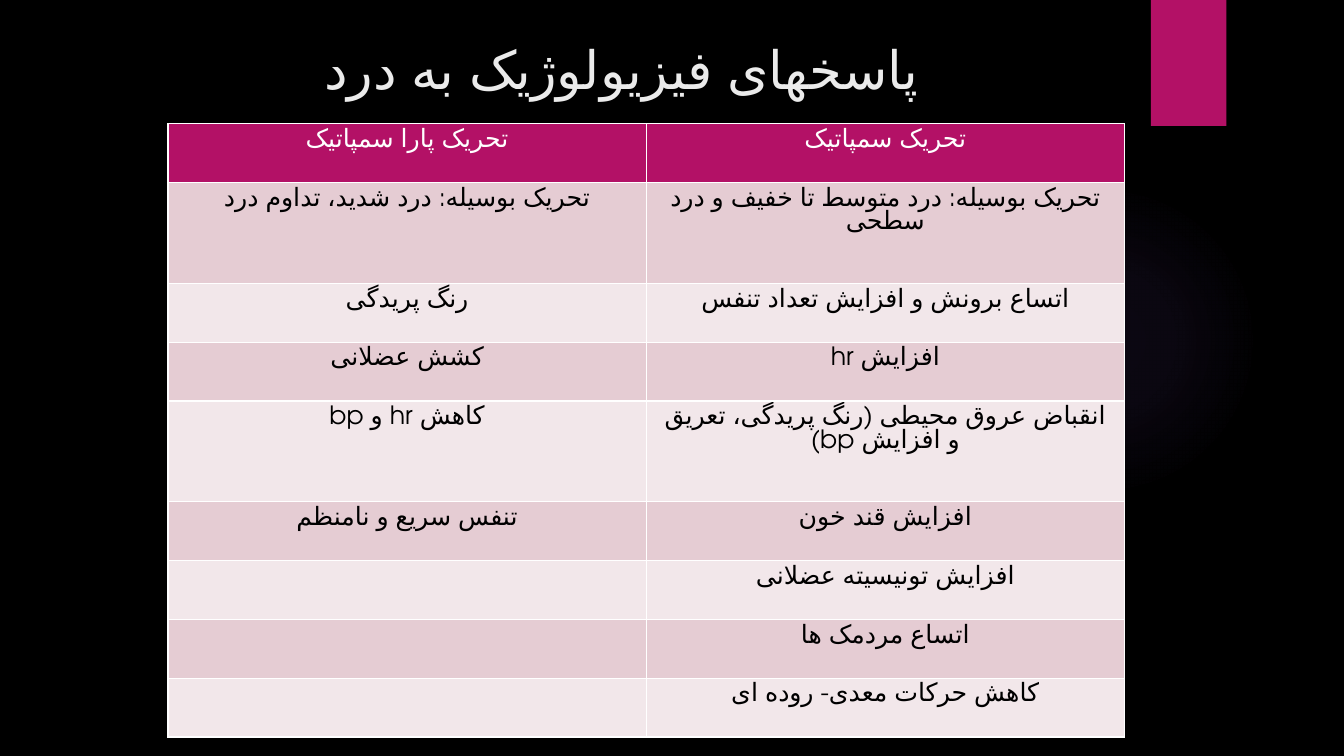
from lxml.etree import SubElement
from pptx import Presentation
from pptx.dml.color import RGBColor
from pptx.enum.lang import MSO_LANGUAGE_ID as Language
from pptx.enum.shapes import MSO_SHAPE as Preset
from pptx.enum.text import MSO_ANCHOR as Anchor, PP_ALIGN as Align
from pptx.oxml import parse_xml
from pptx.oxml.ns import nsdecls, qn

EMU_PER_PX = 9525
FONT = "TeX Gyre Adventor"
MAGENTA, WHITE, BLACK = "B31166", "FFFFFF", "000000"
BANDS = ["E5CCD3", "F2E7EA"]
TITLE = "پاسخهای فیزیولوژیک به درد"
ROW, TALL_ROW = 56, 96
RESPONSES = [
    (ROW, "تحریک پارا سمپاتیک", "تحریک سمپاتیک"),
    (TALL_ROW, "تحریک بوسیله: درد شدید، تداوم درد",
     "تحریک بوسیله: درد متوسط تا خفیف و درد سطحی"),
    (ROW, "رنگ پریدگی", "اتساع برونش و افزایش تعداد تنفس"),
    (ROW, "کشش عضلانی", "افزایش hr"),
    (TALL_ROW, "کاهش hr و bp",
     "انقباض عروق محیطی (رنگ پریدگی، تعریق و افزایش bp)"),
    (ROW, "تنفس سریع و نامنظم", "افزایش قند خون"),
    (ROW, "", "افزایش تونیسیته عضلانی"),
    (ROW, "", "اتساع مردمک ها"),
    (ROW, "", "کاهش حرکات معدی- روده ای"),
]


def px(*lengths):
    return [length * EMU_PER_PX for length in lengths]


def paint(fill, color):
    fill.solid()
    fill.fore_color.rgb = RGBColor.from_string(color)


def write(paragraph, text, size, color, **formats):
    """Put one centred right-to-left Persian run into the paragraph."""
    paragraph._p.get_or_add_pPr().set("rtl", "1")
    for name, value in {"alignment": Align.CENTER, **formats}.items():
        setattr(paragraph, name, value)
    run = paragraph.add_run()
    run.text = text
    run.font.size = size * 12700
    run.font.name = FONT
    run.font.language_id = Language.FARSI
    paint(run.font.fill, color)
    SubElement(run.font._element, qn("a:cs")).set("typeface", FONT)


def add_plain_shape(slide, preset, box):
    shape = slide.shapes.add_shape(preset, *px(*box))
    shape.shadow.inherit = False
    shape.line.fill.background()
    return shape


def add_glow(slide, box):
    glow = add_plain_shape(slide, Preset.OVAL, box)
    stops = "".join(
        f'<a:gs pos="{position}000"><a:srgbClr val="9B6BF2">'
        f'<a:alpha val="{alpha}000"/></a:srgbClr></a:gs>'
        for position, alpha in [(0, 7), (36, 6), (69, 0), (100, 0)])
    gradient = parse_xml(
        f'<a:gradFill {nsdecls("a")} rotWithShape="1"><a:gsLst>{stops}</a:gsLst>'
        '<a:path path="circle"><a:fillToRect l="50000" t="50000" r="50000" '
        'b="50000"/></a:path></a:gradFill>')
    glow._element.spPr.find(qn("a:prstGeom")).addnext(gradient)


def add_ribbon(slide, box):
    paint(add_plain_shape(slide, Preset.RECTANGLE, box).fill, MAGENTA)


def add_title(slide, box):
    frame = slide.shapes.add_textbox(*px(*box)).text_frame
    frame.word_wrap = True
    frame.vertical_anchor = Anchor.TOP
    write(frame.paragraphs[0], TITLE, 37.8, "EBEBEB", line_spacing=1.5)


def add_borders(cell):
    properties = cell._tc.get_or_add_tcPr()
    for side in "LRTB":
        properties.append(parse_xml(
            f'<a:ln{side} {nsdecls("a")} w="12700"><a:solidFill>'
            f'<a:srgbClr val="{WHITE}"/></a:solidFill></a:ln{side}>'))


def add_responses(slide, left, top, width):
    height = sum(row[0] for row in RESPONSES)
    table = slide.shapes.add_table(
        len(RESPONSES), 2, *px(left, top, width, height)).table
    table.first_row = table.horz_banding = False
    for index, (row_height, *texts) in enumerate(RESPONSES):
        table.rows[index].height = row_height * EMU_PER_PX
        header = index == 0
        for column, text in enumerate(texts):
            cell = table.cell(index, column)
            add_borders(cell)
            paint(cell.fill, MAGENTA if header else BANDS[(index - 1) % 2])
            if text:
                write(cell.text_frame.paragraphs[0], text, 18,
                      WHITE if header else BLACK)


def main():
    presentation = Presentation()
    presentation.slide_width, presentation.slide_height = px(1280, 720)
    slide = presentation.slides.add_slide(presentation.slide_layouts[6])
    paint(slide.background.fill, BLACK)
    add_glow(slide, (903, 176, 296, 296))
    add_ribbon(slide, (1096, 0, 72, 120))
    add_title(slide, (212, 0, 760, 86))
    add_responses(slide, 160, 118, 911)
    presentation.save("out.pptx")


if __name__ == "__main__":
    main()
